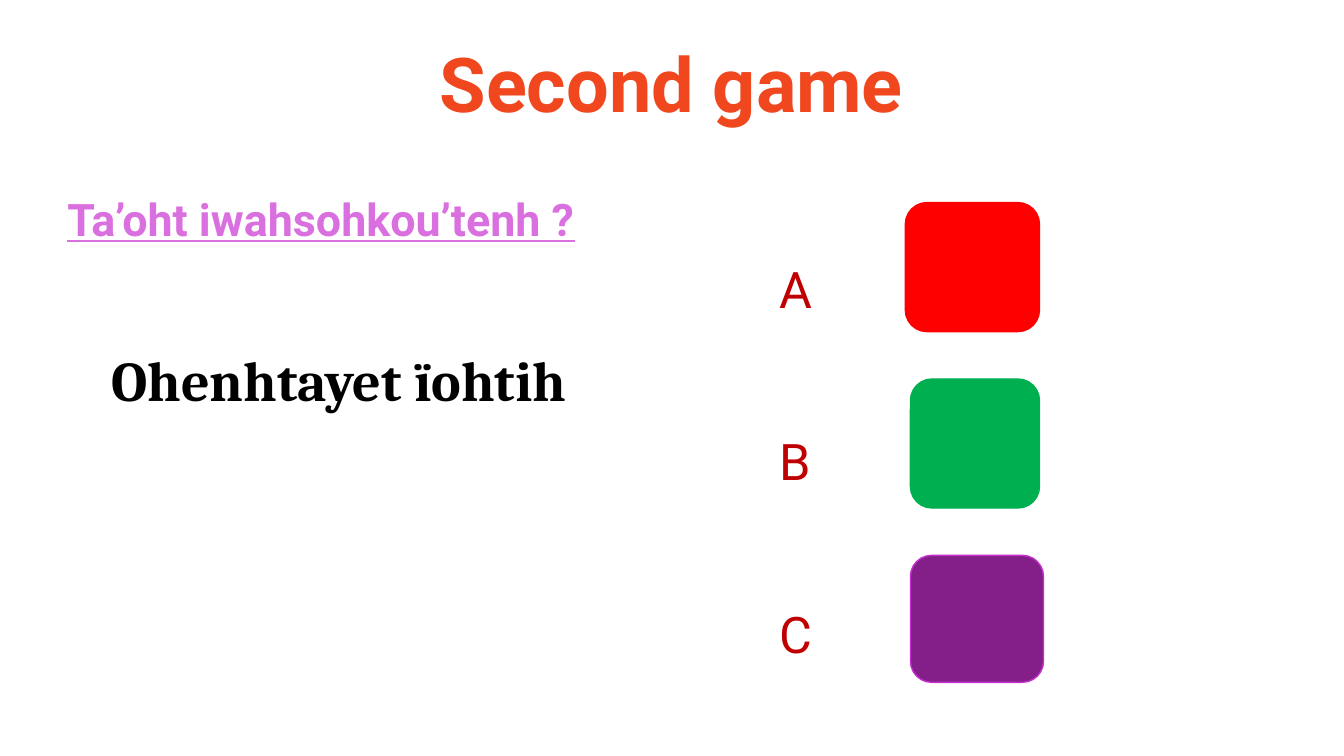
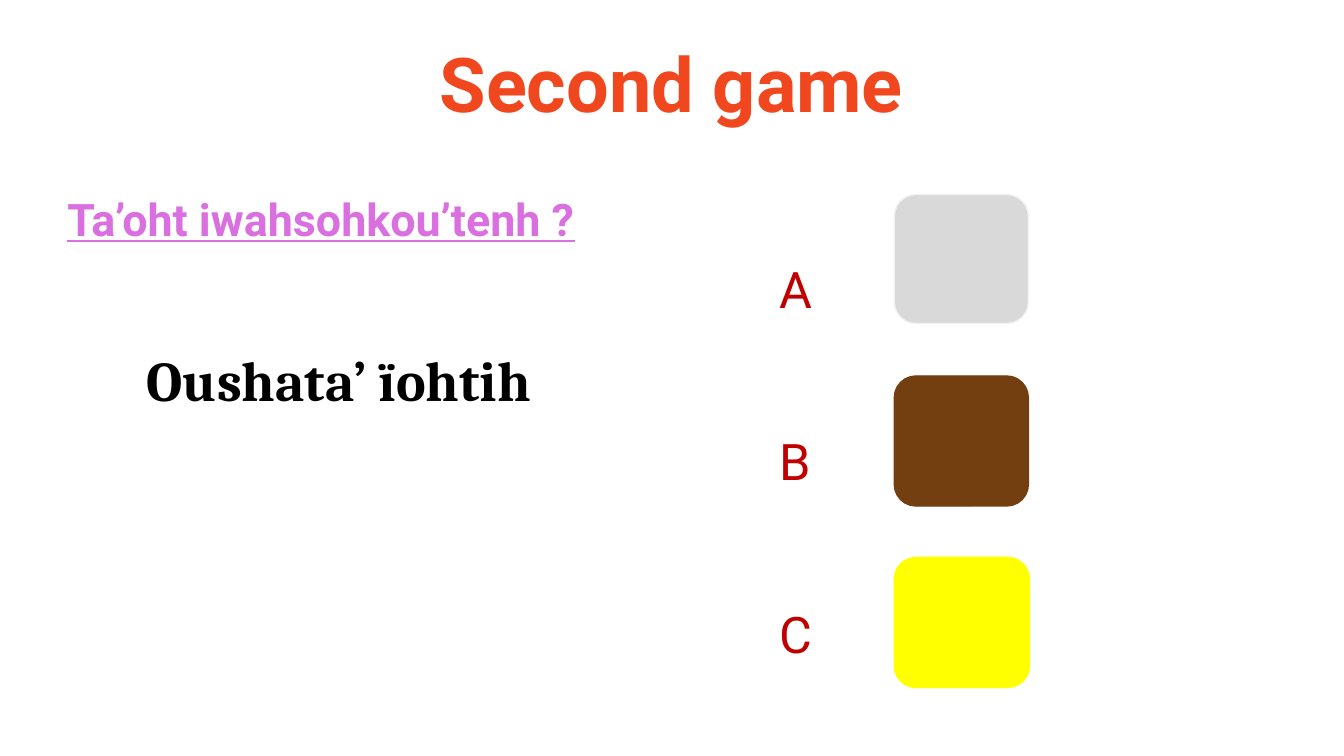
from typing import NamedTuple

from pptx import Presentation, util as u
from pptx.dml.color import RGBColor
from pptx.enum import shapes, text

PX = 9144  # EMU per px, 100 px to the inch

ORANGE = RGBColor(0xF1, 0x47, 0x1F)
PINK = RGBColor(0xDA, 0x6F, 0xDF)
BLACK = RGBColor(0x00, 0x00, 0x00)
DARK_RED = RGBColor(0xC0, 0x00, 0x00)
RED = RGBColor(0xFF, 0x00, 0x00)
GREEN = RGBColor(0x00, 0xB0, 0x50)
PURPLE = RGBColor(0x84, 0x1E, 0x89)
MAGENTA = RGBColor(0xC6, 0x2E, 0xCD)
GREY = RGBColor(0xD9, 0xD9, 0xD9)
LIGHT_GREY = RGBColor(0xF2, 0xF2, 0xF2)
BROWN = RGBColor(0x73, 0x3E, 0x10)
YELLOW = RGBColor(0xFF, 0xFF, 0x00)


class Box(NamedTuple):
    left: int
    top: int
    width: int
    height: int

    def emu(self) -> list[int]:
        return [n * PX for n in self]


class Style(NamedTuple):
    font: str
    size: int
    color: RGBColor
    bold: bool = True
    underline: bool = False
    align: text.PP_ALIGN = text.PP_ALIGN.LEFT
    anchor: text.MSO_ANCHOR = text.MSO_ANCHOR.TOP
    line_spacing: float = 1.0
    gap: int = 0  # points between paragraphs


class Swatch(NamedTuple):
    box: Box
    fill: RGBColor
    line: RGBColor


class Question(NamedTuple):
    phrase: str
    swatches: list[Swatch]


# Shared styles
TITLE = Style("Roboto", 54, ORANGE, align=text.PP_ALIGN.CENTER,
              anchor=text.MSO_ANCHOR.BOTTOM, line_spacing=0.9)
PROMPT = Style("Roboto", 32, PINK, underline=True)
PHRASE = Style("Cambria", 40, BLACK, align=text.PP_ALIGN.CENTER)
CHOICES = Style("Roboto", 36, DARK_RED, bold=False, gap=80)

QUESTIONS = [
    Question("Ohenhtayet ïohtih", [
        Swatch(Box(903, 551, 132, 126), PURPLE, MAGENTA),
        Swatch(Box(903, 376, 128, 128), GREEN, GREEN),
        Swatch(Box(898, 201, 133, 128), RED, RED),
    ]),
    Question("Oushata’ ïohtih", [
        Swatch(Box(887, 193, 133, 128), GREY, LIGHT_GREY),
        Swatch(Box(887, 373, 133, 129), BROWN, BROWN),
        Swatch(Box(887, 553, 134, 129), YELLOW, YELLOW),
    ]),
]


def add_text(s, box: Box, lines: list[str], style: Style) -> None:
    tf = s.shapes.add_textbox(*box.emu()).text_frame
    tf.word_wrap = True
    tf.vertical_anchor = style.anchor
    for i, line in enumerate(lines):
        p = tf.add_paragraph() if i else tf.paragraphs[0]
        p.alignment = style.align
        p.line_spacing = style.line_spacing
        if i:
            p.space_before = u.Pt(style.gap)
        r = p.add_run()
        r.text = line
        r.font.name = style.font
        r.font.size = u.Pt(style.size)
        r.font.bold = style.bold
        r.font.underline = style.underline
        r.font.color.rgb = style.color


def add_swatch(s, swatch: Swatch) -> None:
    sp = s.shapes.add_shape(shapes.MSO_SHAPE.ROUNDED_RECTANGLE, *swatch.box.emu())
    sp.shadow.inherit = False
    sp.fill.solid()
    sp.fill.fore_color.rgb = swatch.fill
    sp.line.color.rgb = swatch.line
    sp.line.width = u.Pt(1)


def add_question(prs, question: Question) -> None:
    s = prs.slides.add_slide(prs.slide_layouts[6])
    # Title and question
    add_text(s, Box(116, 0, 1100, 133), ["Second game"], TITLE)
    add_text(s, Box(57, 185, 718, 64), ["Ta’oht iwahsohkou’tenh ?"], PROMPT)
    add_text(s, Box(48, 338, 576, 110), [question.phrase], PHRASE)
    # Answer letters and colours
    add_text(s, Box(763, 251, 478, 499), ["A", "B", "C"], CHOICES)
    for swatch in question.swatches:
        add_swatch(s, swatch)


def main() -> None:
    prs = Presentation()
    prs.slide_width, prs.slide_height = 1333 * PX, 750 * PX
    for question in QUESTIONS:
        add_question(prs, question)
    prs.save("out.pptx")


if __name__ == "__main__":
    main()
